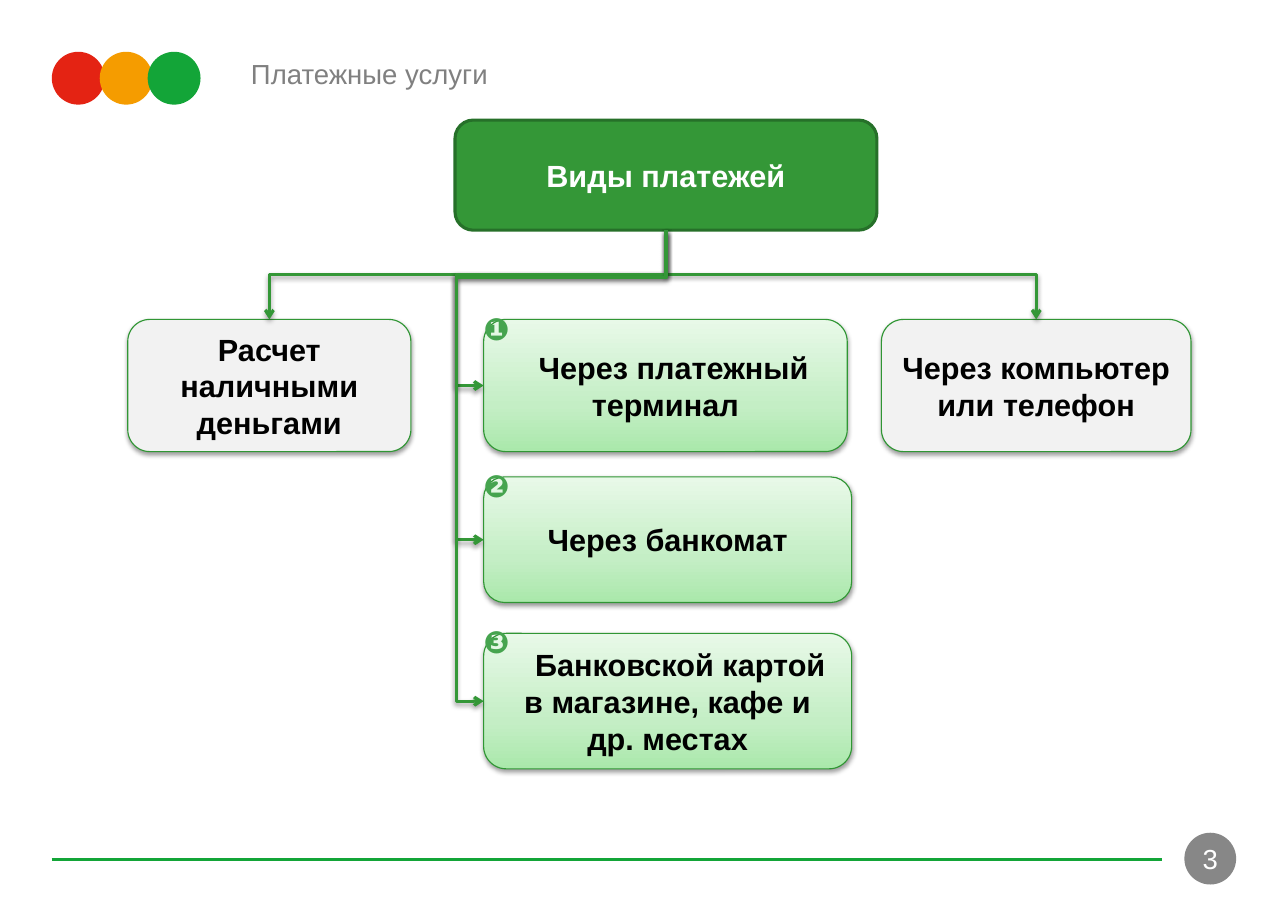
from lxml import etree
from pptx import Presentation
from pptx import util as u
from pptx.dml.color import RGBColor
from pptx.enum import shapes, text
from pptx.oxml import parse_xml
from pptx.oxml.ns import nsdecls, qn

COLORS = {
    "red": "E42313", "amber": "F59C00", "green": "13A538", "gray": "878787",
    "title": "808080", "root": "349737", "root_edge": "267029",
    "plain": "F2F2F2", "edge": "309634", "badge": "46A44F",
    "white": "FFFFFF", "black": "000000",
}
MINT = [(0, "AAE8AB"), (35, "C4EEC5"), (100, "E8F9E8")]
TOP, LEFT, BOTTOM = 0, 1, 2


class Board:
    def __init__(self, slide, font="Arial"):
        self.slide = slide
        self.font = font

    def color(self, name):
        return RGBColor.from_string(COLORS[name])

    def set_words(self, shape, words, size, color, bold=False, centered=True, indent=0):
        frame = shape.text_frame
        frame.word_wrap = True
        frame.vertical_anchor = text.MSO_ANCHOR.MIDDLE if centered else text.MSO_ANCHOR.TOP
        paragraph = frame.paragraphs[0]
        paragraph.text = words
        paragraph.alignment = text.PP_ALIGN.CENTER if centered else text.PP_ALIGN.LEFT
        if indent:
            paragraph._p.get_or_add_pPr().set("indent", str(u.Inches(indent)))
        paragraph.font.name = self.font
        paragraph.font.size = u.Pt(size)
        paragraph.font.bold = bold
        paragraph.font.color.rgb = self.color(color)
        return frame

    def label(self, words, left, top, width, height, size, color, bold=False):
        area = self.slide.shapes.add_textbox(*map(u.Inches, (left, top, width, height)))
        return self.set_words(area, words, size, color, bold, centered=False)

    def badge(self, digit, left, top):
        frame = self.label(digit, left, top, 0.45, 0.44, 20, "badge", True)
        frame.word_wrap = False
        frame.auto_size = text.MSO_AUTO_SIZE.SHAPE_TO_FIT_TEXT

    def circle(self, left, top, size, fill):
        dot = self.slide.shapes.add_shape(
            shapes.MSO_SHAPE.OVAL, *map(u.Inches, (left, top, size, size)))
        dot.shadow.inherit = False
        dot.fill.solid()
        dot.fill.fore_color.rgb = self.color(fill)
        dot.line.fill.background()
        return dot

    def cast_shadow(self, shape):
        properties = shape._element.spPr
        for effects in properties.findall(qn("a:effectLst")):
            properties.remove(effects)
        properties.append(parse_xml(
            f'<a:effectLst {nsdecls("a")}><a:outerShdw blurRad="40000" dist="20000" '
            'dir="5400000" rotWithShape="0"><a:srgbClr val="000000">'
            '<a:alpha val="38000"/></a:srgbClr></a:outerShdw></a:effectLst>'))

    def card(self, words, left, top, width, height, fill, edge="edge", weight=0.75,
             ink="black", indent=0, shadow=True):
        box = self.slide.shapes.add_shape(
            shapes.MSO_SHAPE.ROUNDED_RECTANGLE,
            *map(u.Inches, (left, top, width, height)))
        if fill == "mint":
            stops = "".join(f'<a:gs pos="{at * 1000}"><a:srgbClr val="{tone}"/></a:gs>'
                            for at, tone in MINT)
            box._element.spPr.append(parse_xml(
                f'<a:gradFill {nsdecls("a")} rotWithShape="1"><a:gsLst>{stops}</a:gsLst>'
                '<a:lin ang="16200000" scaled="0"/></a:gradFill>'))
        else:
            box.fill.solid()
            box.fill.fore_color.rgb = self.color(fill)
        box.line.color.rgb = self.color(edge)
        box.line.width = u.Pt(weight)
        box.shadow.inherit = False
        if shadow:
            self.cast_shadow(box)
        self.set_words(box, words, 20, ink, True, indent=indent)
        return box

    def rule(self, left, right, y, color):
        line = self.slide.shapes.add_connector(
            shapes.MSO_CONNECTOR.STRAIGHT, *map(u.Inches, (left, y, right, y)))
        line.line.color.rgb = self.color(color)
        line.line.width = u.Pt(2)
        etree.SubElement(line._element.spPr, qn("a:effectLst"))

    def branch(self, parent, child, side, bus, rail=None):
        arrow = self.slide.shapes.add_connector(shapes.MSO_CONNECTOR.ELBOW, 0, 0, 0, 0)
        arrow.begin_connect(parent, BOTTOM)
        arrow.end_connect(child, side)
        x1, y1 = parent.left + parent.width // 2, parent.top + parent.height
        x2 = child.left + (child.width // 2 if side == TOP else 0)
        y2 = child.top + (child.height // 2 if side == LEFT else 0)
        across, down = abs(x2 - x1), y2 - y1
        arrow.left, arrow.top = (x1 + x2 - down) // 2, (y1 + y2 - across) // 2
        arrow.width, arrow.height = down, across

        properties = arrow._element.spPr
        frame = properties.find(qn("a:xfrm"))
        for flip in ("flipH", "flipV"):
            frame.attrib.pop(flip, None)
        frame.set("rot", "5400000" if x2 < x1 else "16200000")
        if x2 > x1:
            frame.set("flipH", "1")

        bends = [(u.Inches(bus) - y1) / down]
        if rail:
            bends.append((x1 - u.Inches(rail)) / across)
        geometry = properties.find(qn("a:prstGeom"))
        geometry.set("prst", f"bentConnector{len(bends) + 2}")
        for guides in geometry.findall(qn("a:avLst")):
            geometry.remove(guides)
        guides = etree.SubElement(geometry, qn("a:avLst"))
        for number, bend in enumerate(bends, 1):
            etree.SubElement(guides, qn("a:gd"), name=f"adj{number}",
                             fmla=f"val {round(bend * 100000)}")

        arrow.line.color.rgb = self.color("root")
        arrow.line.width = u.Pt(2)
        etree.SubElement(properties.find(qn("a:ln")), qn("a:tailEnd"), type="arrow")
        self.cast_shadow(arrow)


def main():
    deck = Presentation()
    deck.slide_width, deck.slide_height = u.Inches(11.69), u.Inches(8.27)
    board = Board(deck.slides.add_slide(deck.slide_layouts[6]))

    for place, light in enumerate(("red", "amber", "green")):
        board.circle(0.47 + 0.435 * place, 0.47, 0.48, light)
    board.rule(0.47, 10.55, 7.8, "green")
    page = board.circle(10.75, 7.56, 0.47, "gray")
    page_frame = board.set_words(page, "3", 18, "white")
    page_frame.margin_left = page_frame.margin_right = 0
    board.label("Платежные услуги", 2.18, 0.47, 7.5, 0.58, 18, "title")

    payments = board.card("Виды платежей", 4.13, 1.09, 3.83, 1, "root",
                          "root_edge", 2, "white", shadow=False)
    cash = board.card("Расчет наличными деньгами", 1.16, 2.9, 2.57, 1.2, "plain")
    online = board.card("Через компьютер или телефон", 8, 2.9, 2.81, 1.2, "plain")
    for method in (cash, online):
        board.branch(payments, method, TOP, 2.49)

    channels = [
        ("❶", "Через платежный терминал", 2.9, 3.3, 1.2, 0.15, 2.49),
        ("❷", "Через банкомат", 4.33, 3.34, 1.14, 0, 2.49),
        ("❸", "Банковской картой в магазине, кафе и др. местах",
         5.75, 3.34, 1.23, 0.23, 2.52),
    ]
    for digit, words, top, width, height, indent, bus in channels:
        channel = board.card(words, 4.39, top, width, height, "mint", indent=indent)
        board.branch(payments, channel, LEFT, bus, rail=4.14)
        board.badge(digit, 4.29, top - 0.14)

    deck.save("out.pptx")


if __name__ == "__main__":
    main()
